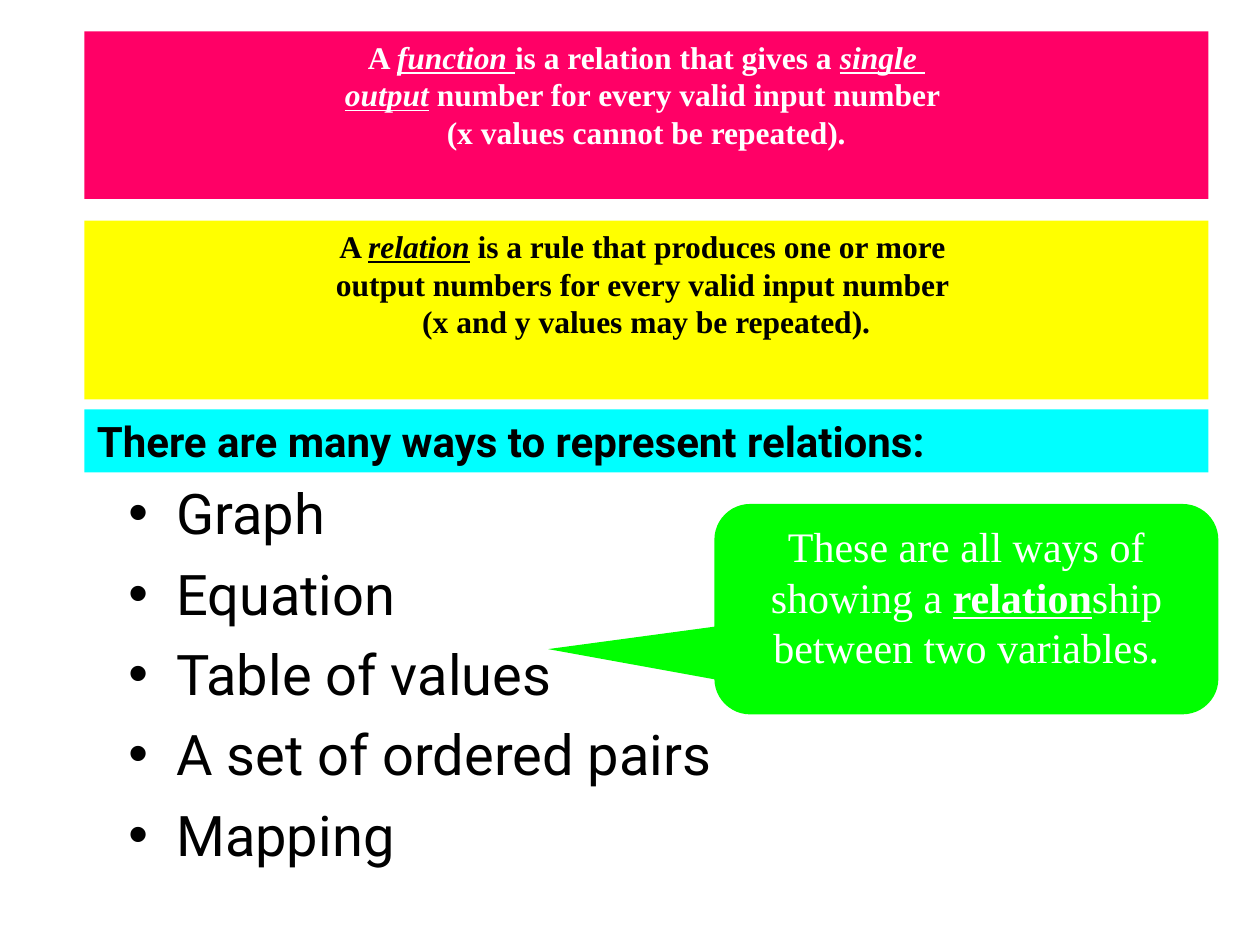
from dataclasses import dataclass

from lxml.etree import SubElement
from pptx import Presentation
from pptx.dml.color import RGBColor
from pptx.enum.shapes import MSO_SHAPE
from pptx.enum.text import MSO_ANCHOR, PP_ALIGN
from pptx.oxml.ns import qn
from pptx.util import Inches, Pt

WHITE = RGBColor(255, 255, 255)
BLACK = RGBColor(0, 0, 0)
PINK = RGBColor(255, 0, 102)
CYAN = RGBColor(0, 255, 255)
YELLOW = RGBColor(255, 255, 0)
GREEN = RGBColor(0, 255, 0)
SERIF = "Times New Roman"
SANS = "Roboto"
BAND_LEFT = 0.67
BAND_WIDTH = 8.92
KEY_TERM = {"italic": True, "underline": True}
STRONG_TERM = {"bold": True, "underline": True}


@dataclass
class Span:
    text: str
    emphasis: dict | None = None


@dataclass
class Panel:
    left: float
    top: float
    width: float
    height: float
    fill: RGBColor
    font: dict
    color: RGBColor
    paragraphs: list[list[Span]]
    align: PP_ALIGN = PP_ALIGN.CENTER
    wrap: bool = True
    kind: MSO_SHAPE = MSO_SHAPE.RECTANGLE
    adjustments: tuple[float, ...] = ()


DEFINITION_FONT = {"name": SERIF, "size": Pt(18), "bold": True}
HEADING_FONT = {"name": SANS, "size": Pt(24), "bold": True}
CALLOUT_FONT = {"name": SERIF, "size": Pt(24), "bold": False}
LIST_FONT = {"name": SANS, "size": Pt(32), "bold": False}

PANELS = [
    Panel(BAND_LEFT, 0.25, BAND_WIDTH, 1.33, PINK, DEFINITION_FONT, WHITE, [
        [Span("A "), Span("function ", KEY_TERM),
         Span("is a relation that gives a "), Span("single ", KEY_TERM)],
        [Span("output", KEY_TERM), Span(" number for every valid input number ")],
        [Span("(x values cannot be repeated).")],
    ], wrap=False),
    Panel(BAND_LEFT, 3.25, BAND_WIDTH, 0.5, CYAN, HEADING_FONT, BLACK, [
        [Span("There are many ways to represent relations:")],
    ], align=PP_ALIGN.LEFT),
    Panel(BAND_LEFT, 1.75, BAND_WIDTH, 1.42, YELLOW, DEFINITION_FONT, BLACK, [
        [Span("A "), Span("relation", KEY_TERM),
         Span(" is a rule that produces one or more ")],
        [Span("output numbers for every valid input number ")],
        [Span("(x and y values may be repeated).")],
    ], wrap=False),
    Panel(5.67, 4, 4, 1.67, GREEN, CALLOUT_FONT, WHITE, [
        [Span("These are all ways of showing a "), Span("relation", STRONG_TERM),
         Span("ship between two variables.")],
    ], kind=MSO_SHAPE.ROUNDED_RECTANGULAR_CALLOUT, adjustments=(-0.83, 0.19, 0.17)),
]

REPRESENTATIONS = ["Graph", "Equation", "Table of values",
                   "A set of ordered pairs", "Mapping"]


def add_span(para, span: Span, font: dict, color: RGBColor) -> None:
    run = para.add_run()
    run.text = span.text
    for name, value in {**font, **(span.emphasis or {})}.items():
        setattr(run.font, name, value)
    run.font.color.rgb = color


def paragraph_at(frame, index: int):
    return frame.add_paragraph() if index else frame.paragraphs[0]


def add_panel(page, panel: Panel) -> None:
    box = page.shapes.add_shape(
        panel.kind, Inches(panel.left), Inches(panel.top),
        Inches(panel.width), Inches(panel.height))
    for index, value in enumerate(panel.adjustments):
        box.adjustments[index] = value
    box.shadow.inherit = False
    box.fill.solid()
    box.fill.fore_color.rgb = panel.fill
    box.line.fill.background()
    frame = box.text_frame
    frame.word_wrap = panel.wrap
    frame.vertical_anchor = MSO_ANCHOR.TOP
    for index, spans in enumerate(panel.paragraphs):
        para = paragraph_at(frame, index)
        para.alignment = panel.align
        for span in spans:
            add_span(para, span, panel.font, panel.color)


def add_bullet(para) -> None:
    properties = para._p.get_or_add_pPr()
    properties.set("marL", str(Inches(0.38)))
    properties.set("indent", str(Inches(-0.38)))
    SubElement(properties, qn("a:buFont"), typeface="Arial")
    SubElement(properties, qn("a:buChar"), char="•")


def add_bullet_list(page, items: list[str]) -> None:
    box = page.shapes.add_textbox(Inches(0.92), Inches(3.75), Inches(8.5), Inches(3.33))
    frame = box.text_frame
    frame.word_wrap = True
    for index, item in enumerate(items):
        para = paragraph_at(frame, index)
        add_bullet(para)
        if index:
            para.space_before = Pt(7.5)
        add_span(para, Span(item), LIST_FONT, BLACK)


def main() -> None:
    deck = Presentation()
    deck.slide_width = Inches(10)
    deck.slide_height = Inches(7.5)
    page = deck.slides.add_slide(deck.slide_layouts[6])
    for panel in PANELS:
        add_panel(page, panel)
    add_bullet_list(page, REPRESENTATIONS)
    deck.save("out.pptx")


if __name__ == "__main__":
    main()
